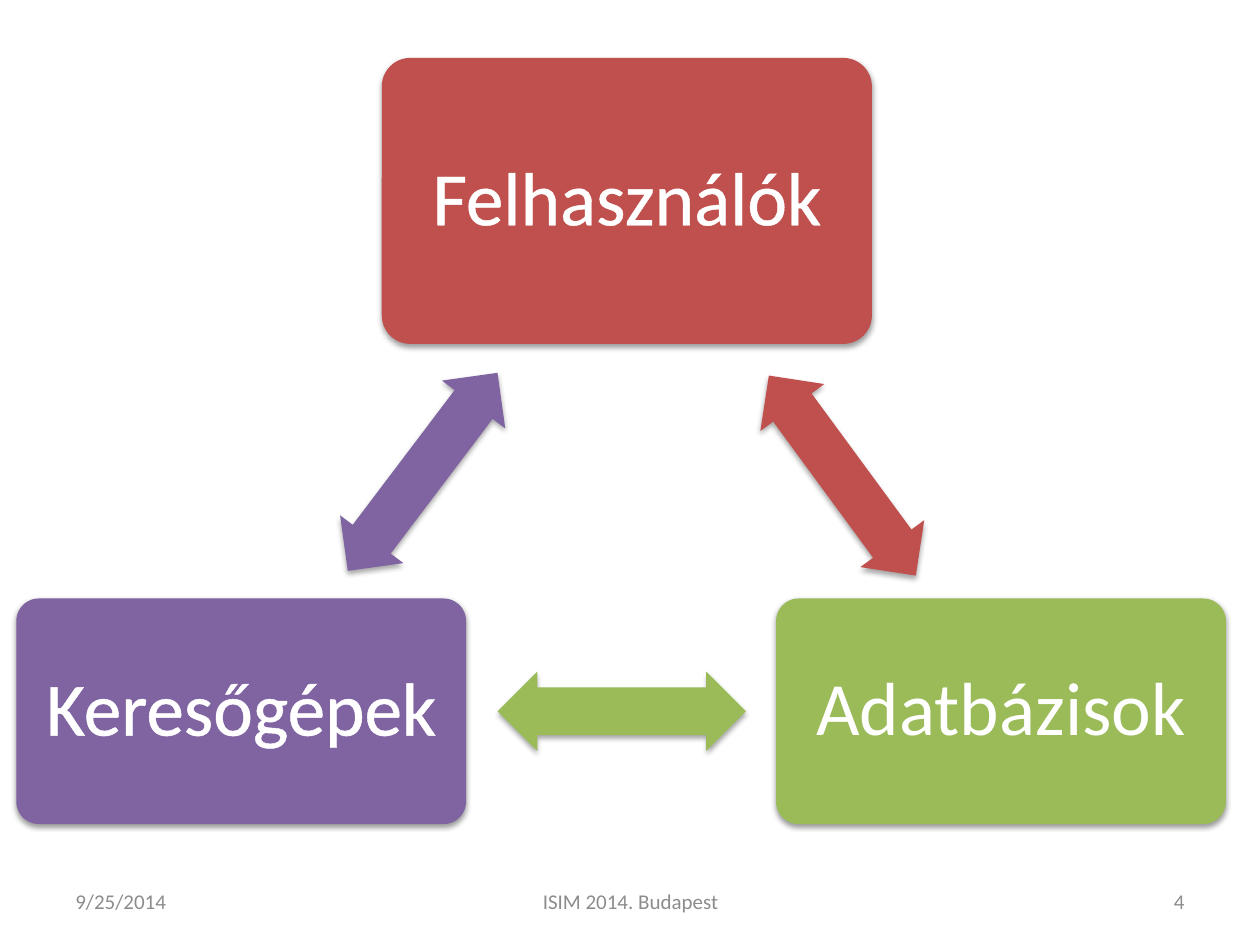
from lxml.etree import SubElement
from pptx import Presentation
from pptx.dml.color import RGBColor
from pptx.enum.shapes import MSO_SHAPE
from pptx.enum.text import MSO_ANCHOR, PP_ALIGN
from pptx.oxml import parse_xml
from pptx.oxml.ns import nsdecls, qn
from pptx.util import Inches, Pt

THEME = {
    "font": "Calibri",
    "users": "C0504D",
    "databases": "9BBB59",
    "engines": "8064A2",
    "node_text": "FFFFFF",
    "footer_text": "8C8C8C",
    "node_size": 43,
    "footer_size": 12,
}

NODES = [
    ("Felhasználók", "users", (3.03, 0.46, 3.89, 2.27), True),
    ("Adatbázisok", "databases", (6.16, 4.75, 3.57, 1.79), False),
    ("Keresőgépek", "engines", (0.13, 4.75, 3.57, 1.79), True),
]
ARROW_SIZE = (1.97, 0.63)
ARROWS = [
    ("users", (5.7, 3.46), 53.7),
    ("databases", (3.95, 5.33), 180),
    ("engines", (2.37, 3.43), 307.1),
]
FOOTER_TOP, FOOTER_HEIGHT = 6.95, 0.4
FOOTERS = [
    ("9/25/2014", 0.5, 2.33, PP_ALIGN.LEFT),
    ("ISIM 2014. Budapest", 3.42, 3.17, PP_ALIGN.CENTER),
    ("4", 7.17, 2.33, PP_ALIGN.RIGHT),
]


def write(frame, text, size, color, align):
    frame.word_wrap = True
    frame.vertical_anchor = MSO_ANCHOR.MIDDLE
    paragraph = frame.paragraphs[0]
    paragraph.alignment = align
    run = paragraph.add_run()
    run.text = text
    run.font.name = THEME["font"]
    run.font.size = Pt(THEME[size])
    run.font.color.rgb = RGBColor.from_string(THEME[color])
    return paragraph, run


def add_block(slide, preset, box, color, adjustments, opacity, distance):
    block = slide.shapes.add_shape(preset, *map(Inches, box))
    for index, value in enumerate(adjustments):
        block.adjustments[index] = value
    block.fill.solid()
    block.fill.fore_color.rgb = RGBColor.from_string(THEME[color])
    block.line.fill.background()
    block.shadow.inherit = False
    effects = block.element.spPr.find(qn("a:effectLst"))
    shadow = SubElement(effects, qn("a:outerShdw"), blurRad=str(Pt(3.1)),
                        dist=str(Pt(distance)), dir="5400000", rotWithShape="0")
    shade = SubElement(shadow, qn("a:srgbClr"), val="000000")
    SubElement(shade, qn("a:alpha"), val=str(opacity * 1000))
    return block


def add_node(slide, label, color, box, outlined):
    node = add_block(slide, MSO_SHAPE.ROUNDED_RECTANGLE, box, color, [0.1], 38, 1.6)
    frame = node.text_frame
    frame.margin_left = frame.margin_right = Inches(0.18)
    frame.margin_top = frame.margin_bottom = Inches(0.18)
    paragraph, run = write(frame, label, "node_size", "node_text", PP_ALIGN.CENTER)
    paragraph.line_spacing = 0.9
    if outlined:
        run.font._element.insert(0, parse_xml(
            f'<a:ln {nsdecls("a")} w="{Pt(1.45)}"><a:solidFill>'
            f'<a:srgbClr val="{THEME["node_text"]}"/></a:solidFill></a:ln>'))


def add_arrow(slide, color, corner, angle):
    arrow = add_block(slide, MSO_SHAPE.LEFT_RIGHT_ARROW, corner + ARROW_SIZE,
                      color, [0.6, 0.5], 35, 1.8)
    arrow.rotation = angle


def add_footer(slide, text, left, width, align):
    footer = slide.shapes.add_textbox(
        *map(Inches, (left, FOOTER_TOP, width, FOOTER_HEIGHT)))
    write(footer.text_frame, text, "footer_size", "footer_text", align)


def main():
    deck = Presentation()
    deck.slide_width, deck.slide_height = Inches(10), Inches(7.5)
    slide = deck.slides.add_slide(deck.slide_layouts[6])
    for footer in FOOTERS:
        add_footer(slide, *footer)
    for node, arrow in zip(NODES, ARROWS):
        add_node(slide, *node)
        add_arrow(slide, *arrow)
    deck.save("out.pptx")


if __name__ == "__main__":
    main()
